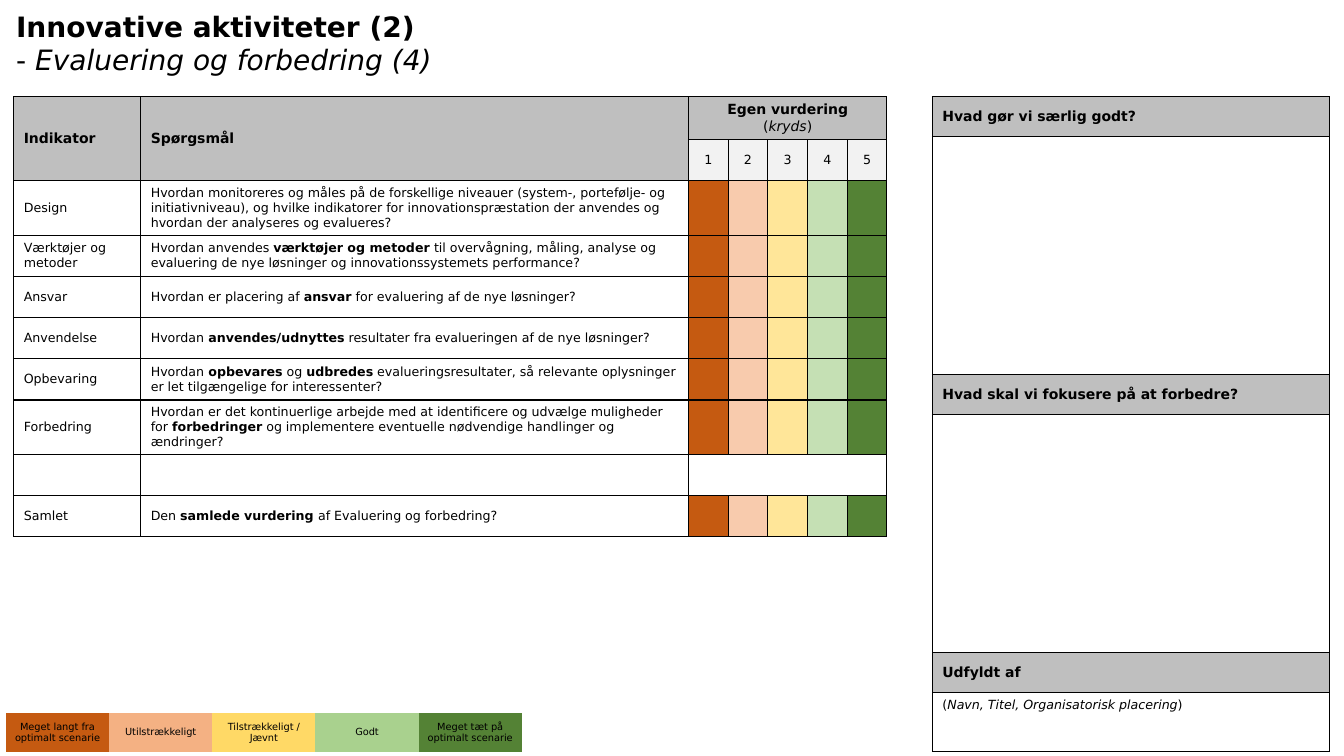
from dataclasses import dataclass
from typing import NamedTuple

from lxml import etree
from pptx import Presentation
from pptx.dml import color
from pptx.enum import text
from pptx.oxml import ns
from pptx.util import Cm, Pt

FONT = "DejaVu Sans"
BLACK = "000000"
HEADER_GREY = "BFBFBF"
SCORE_GREY = "F2F2F2"
SCORE_COLOURS = ["C55A11", "F8CBAD", "FFE699", "C5E0B4", "548235"]
LEFT, CENTRE = text.PP_ALIGN.LEFT, text.PP_ALIGN.CENTER
TOP, MIDDLE = text.MSO_ANCHOR.TOP, text.MSO_ANCHOR.MIDDLE


class Run(NamedTuple):
    text: str
    bold: bool = False
    italic: bool = False


@dataclass
class Cell:
    runs: tuple[Run, ...] = ()
    fill: str | None = None
    size: float = 9
    align: text.PP_ALIGN = LEFT
    anchor: text.MSO_ANCHOR = MIDDLE
    borders: str = "LRTB"
    margins: tuple[float, float] = (0.25, 0.13)


@dataclass
class Grid:
    left: float
    top: float
    widths: list[float]
    heights: list[float]
    cells: list[list[Cell]]


def rgb(value: str) -> color.RGBColor:
    return color.RGBColor.from_string(value)


def write(paragraph, runs: tuple[Run, ...], size: float, align: text.PP_ALIGN) -> None:
    paragraph.alignment = align
    font = paragraph.font
    font.name, font.size = FONT, Pt(size)
    font.color.rgb = rgb(BLACK)
    same_bold = len({run.bold for run in runs}) == 1
    same_italic = len({run.italic for run in runs}) == 1
    if same_bold:
        font.bold = runs[0].bold
    if same_italic:
        font.italic = runs[0].italic
    for part in runs:
        if part.text == "\n":
            paragraph.add_line_break()
            continue
        run = paragraph.add_run()
        run.text = part.text
        if not same_bold:
            run.font.bold = part.bold
        if not same_italic:
            run.font.italic = part.italic


def set_borders(table_cell, visible: str) -> None:
    properties = table_cell._tc.get_or_add_tcPr()
    for side in "LRTB":
        line = etree.SubElement(properties, ns.qn(f"a:ln{side}"), w=str(Pt(1)))
        if side in visible:
            solid = etree.SubElement(line, ns.qn("a:solidFill"))
            etree.SubElement(solid, ns.qn("a:srgbClr"), val=BLACK)
        else:
            etree.SubElement(line, ns.qn("a:noFill"))


def draw_cell(table_cell, cell: Cell) -> None:
    set_borders(table_cell, cell.borders)
    if cell.fill:
        table_cell.fill.solid()
        table_cell.fill.fore_color.rgb = rgb(cell.fill)
    else:
        table_cell.fill.background()
    side, edge = cell.margins
    table_cell.margin_left = table_cell.margin_right = Cm(side)
    table_cell.margin_top = table_cell.margin_bottom = Cm(edge)
    table_cell.vertical_anchor = cell.anchor
    if cell.runs:
        write(table_cell.text_frame.paragraphs[0], cell.runs, cell.size, cell.align)


def draw_grid(slide, grid: Grid):
    table = slide.shapes.add_table(
        len(grid.heights), len(grid.widths), Cm(grid.left), Cm(grid.top),
        Cm(sum(grid.widths)), Cm(sum(grid.heights))).table
    table.first_row = table.horz_banding = False
    for column, width in zip(table.columns, grid.widths):
        column.width = Cm(width)
    for row, height, cells in zip(table.rows, grid.heights, grid.cells):
        row.height = Cm(height)
        for table_cell, cell in zip(row.cells, cells):
            draw_cell(table_cell, cell)
    return table


def heading(words: str) -> Cell:
    return Cell((Run(words, True),), HEADER_GREY, 10)


def question_row(indicator: str, *question: Run) -> list[Cell]:
    return [Cell((Run(indicator),)), Cell(question), *(Cell(fill=c) for c in SCORE_COLOURS)]


def add_title(slide) -> None:
    title = slide.shapes.title
    title.left, title.top, title.width, title.height = Cm(0.15), Cm(0.1), Cm(25.2), Cm(1.96)
    frame = title.text_frame
    frame.word_wrap = True
    frame.auto_size = text.MSO_AUTO_SIZE.NONE
    frame.vertical_anchor = TOP
    write(frame.paragraphs[0], (Run("Innovative aktiviteter (2)", True),), 20, LEFT)
    subtitle = (Run("- "), Run("Evaluering og forbedring (4)", italic=True))
    write(frame.add_paragraph(), subtitle, 20, LEFT)


def add_questions(slide) -> None:
    grey = Cell(fill=HEADER_GREY)
    rating = Cell((Run("Egen vurdering", True), Run("\n", True), Run("("),
                   Run("kryds", italic=True), Run(")")), HEADER_GREY, 10, CENTRE)
    scores = [Cell((Run(str(n)),), SCORE_GREY, align=CENTRE) for n in range(1, 6)]
    gap = [Cell(borders=sides) for sides in ("LTB", "TB", "TB", "TB", "RTB")]
    rows = [
        [heading("Indikator"), heading("Spørgsmål"), rating] + [grey] * 4,
        [grey, grey, *scores],
        question_row("Design", Run(
            "Hvordan monitoreres og måles på de forskellige niveauer (system-, portefølje- og "
            "initiativniveau), og hvilke indikatorer for innovationspræstation der anvendes og "
            "hvordan der analyseres og evalueres?")),
        question_row("Værktøjer og metoder", Run("Hvordan anvendes "),
                     Run("værktøjer og metoder ", True),
                     Run("til overvågning, måling, analyse og evaluering de nye løsninger "
                         "og innovationssystemets performance?")),
        question_row("Ansvar", Run("Hvordan er placering af "), Run("ansvar", True),
                     Run(" for evaluering af de nye løsninger?")),
        question_row("Anvendelse", Run("Hvordan"), Run(" anvendes/udnyttes", True),
                     Run(" resultater fra evalueringen af de nye løsninger?")),
        question_row("Opbevaring", Run("Hvordan"), Run(" opbevares", True), Run(" og "),
                     Run("udbredes", True),
                     Run(" evalueringsresultater, så relevante oplysninger er let "
                         "tilgængelige for interessenter?")),
        question_row("Forbedring",
                     Run("Hvordan er det kontinuerlige arbejde med at identificere og "
                         "udvælge muligheder for "), Run("forbedringer", True),
                     Run(" og implementere eventuelle nødvendige handlinger og ændringer?")),
        [Cell(), Cell(), *gap],
        question_row("Samlet", Run("Den "), Run("samlede vurdering ", True),
                     Run("af Evaluering og forbedring?")),
    ]
    table = draw_grid(slide, Grid(0.35, 2.44, [3.2, 13.8] + [1] * 5, [1] + [1.03] * 9, rows))
    for column in (0, 1):
        table.cell(0, column).merge(table.cell(1, column))
    table.cell(0, 2).merge(table.cell(0, 6))


def add_notes_panel(slide) -> None:
    respondent = (Run("("), Run("Navn, Titel, Organisatorisk placering", italic=True), Run(")"))
    cells = [heading("Hvad gør vi særlig godt?"), Cell(),
             heading("Hvad skal vi fokusere på at forbedre?"), Cell(),
             heading("Udfyldt af"), Cell(respondent, anchor=TOP)]
    draw_grid(slide, Grid(23.5, 2.44, [10], [1, 6, 1, 6, 1, 1.5], [[c] for c in cells]))


def add_legend(slide) -> None:
    levels = {"Meget langt fra optimalt scenarie": "C55A11", "Utilstrækkeligt": "F4B183",
              "Tilstrækkeligt / Jævnt": "FFD966", "Godt": "A9D18E",
              "Meget tæt på optimalt scenarie": "548235"}
    cells = [Cell((Run(label),), fill, 7, CENTRE, borders="", margins=(0.18, 0))
             for label, fill in levels.items()]
    draw_grid(slide, Grid(0.15, 17.97, [2.6] * 5, [0.97], [cells]))


def main() -> None:
    presentation = Presentation()
    presentation.slide_width, presentation.slide_height = Cm(33.87), Cm(19.05)
    slide = presentation.slides.add_slide(presentation.slide_layouts[5])
    add_title(slide)
    add_questions(slide)
    add_notes_panel(slide)
    add_legend(slide)
    presentation.save("out.pptx")


if __name__ == "__main__":
    main()
